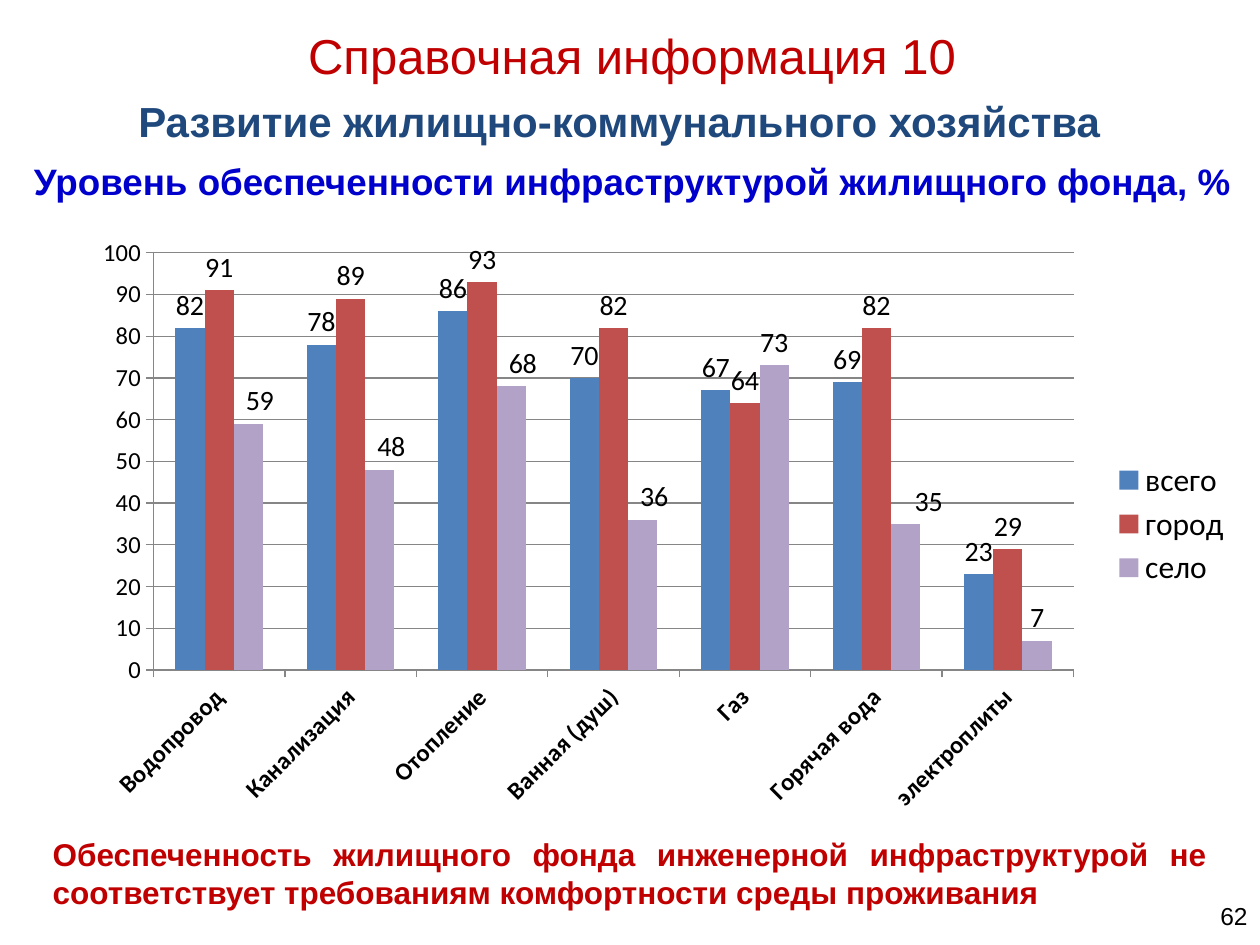
from dataclasses import dataclass

from pptx import Presentation
from pptx.chart.data import CategoryChartData
from pptx.dml.color import RGBColor
from pptx.enum.chart import XL_CHART_TYPE, XL_LABEL_POSITION, XL_LEGEND_POSITION, XL_TICK_MARK
from pptx.enum.text import MSO_ANCHOR, PP_ALIGN
from pptx.oxml import parse_xml
from pptx.oxml.ns import nsdecls
from pptx.util import Inches, Pt


@dataclass(frozen=True)
class Theme:
    """Colours, fonts and type sizes of the slide."""
    text_font: str = "Arial"
    chart_font: str = "Calibri"
    black: str = "000000"
    red: str = "C00000"
    navy: str = "1F497D"
    blue: str = "0000CC"
    grid: str = "868686"
    title: int = 28
    heading: int = 24
    subheading: int = 21
    body: int = 18
    label: int = 16
    small: int = 14


THEME = Theme()
CATEGORIES = ["Водопровод", "Канализация", "Отопление", "Ванная (душ)", "Газ",
              "Горячая вода", "электроплиты"]
SERIES = [
    ("всего", "4F81BD", [82, 78, 86, 70, 67, 69, 23]),
    ("город", "C0504D", [91, 89, 93, 82, 64, 82, 29]),
    ("село", "B3A2C7", [59, 48, 68, 36, 73, 35, 7]),
]
VILLAGE_LABEL_SHIFTS = {0: 0.01, 1: 0.01, 2: 0.01, 3: 0.01, 5: 0.02}


def place(shape, left, top, width, height):
    """Set the position and size of a shape in inches."""
    shape.left, shape.top = Inches(left), Inches(top)
    shape.width, shape.height = Inches(width), Inches(height)


def write_text(box, text, *, size, color, bold=False, align=PP_ALIGN.CENTER,
               anchor=MSO_ANCHOR.TOP, line_spacing=None):
    """Fill a box with one formatted paragraph."""
    frame = box.text_frame
    frame.word_wrap = True
    frame.vertical_anchor = anchor
    para = frame.paragraphs[0]
    para.alignment = align
    para.line_spacing = line_spacing
    span = para.add_run()
    span.text = text
    span.font.name = THEME.text_font
    span.font.size = Pt(size)
    span.font.bold = bold
    span.font.color.rgb = RGBColor.from_string(color)


def add_text(page, bounds, text, **style):
    """Add a text box with one formatted paragraph."""
    box = page.shapes.add_textbox(*map(Inches, bounds))
    write_text(box, text, **style)


def manual_layout(inner=False, edge=True, **values):
    """Return a chart layout element with the given fractions."""
    target = '<c:layoutTarget val="inner"/>' if inner else ""
    modes = '<c:xMode val="edge"/><c:yMode val="edge"/>' if edge else ""
    sizes = "".join(f'<c:{key} val="{value}"/>' for key, value in values.items())
    return parse_xml(f'<c:layout {nsdecls("c")}><c:manualLayout>{target}{modes}{sizes}'
                     '</c:manualLayout></c:layout>')


def set_layout(element, layout, index):
    """Put a layout into a chart element in place of any present one."""
    for old in element.xpath("./c:layout"):
        element.remove(old)
    element.insert(index, layout)


def style_axis(axis, bold=False):
    """Format the line, ticks and labels of an axis."""
    axis.major_tick_mark = XL_TICK_MARK.OUTSIDE
    axis.minor_tick_mark = XL_TICK_MARK.NONE
    axis.format.line.color.rgb = RGBColor.from_string(THEME.grid)
    axis.tick_labels.font.size = Pt(THEME.small)
    axis.tick_labels.font.bold = bold


def style_series(series, color):
    """Colour a series and show its values above the columns."""
    series.format.fill.solid()
    series.format.fill.fore_color.rgb = RGBColor.from_string(color)
    series.invert_if_negative = False
    labels = series.data_labels
    labels.show_value = True
    labels.position = XL_LABEL_POSITION.OUTSIDE_END
    labels.font.size = Pt(THEME.label)


def shift_labels(series, shifts):
    """Move single value labels sideways by fractions of the chart width."""
    for index, shift in shifts.items():
        label = series.points[index].data_label
        label.position = XL_LABEL_POSITION.OUTSIDE_END
        label.font.size = Pt(THEME.label)
        element = series._element.xpath(f'.//c:dLbl[c:idx/@val="{index}"]')[0]
        set_layout(element, manual_layout(edge=False, x=shift, y=0), 1)


def add_supply_chart(page):
    """Add the clustered columns of housing infrastructure."""
    data = CategoryChartData()
    data.categories = CATEGORIES
    for name, _, values in SERIES:
        data.add_series(name, values)
    bounds = map(Inches, (0.67, 1.77, 9.13, 4.73))
    chart = page.shapes.add_chart(XL_CHART_TYPE.COLUMN_CLUSTERED, *bounds, data).chart
    chart.has_title = False
    chart.font.name = THEME.chart_font
    chart.font.size = Pt(THEME.body)
    chart.font.color.rgb = RGBColor.from_string(THEME.black)

    plot = chart.plots[0]
    plot.gap_width = 150
    plot.overlap = 0
    plot.vary_by_categories = False
    for series, (_, color, _) in zip(plot.series, SERIES):
        style_series(series, color)
    shift_labels(plot.series[2], VILLAGE_LABEL_SHIFTS)

    style_axis(chart.category_axis, bold=True)
    chart.category_axis._element.txPr.bodyPr.set("rot", "-2700000")
    values = chart.value_axis
    style_axis(values)
    values.minimum_scale, values.maximum_scale, values.major_unit = 0, 100, 10
    values.has_major_gridlines = True
    values.major_gridlines.format.line.color.rgb = RGBColor.from_string(THEME.grid)

    chart.has_legend = True
    chart.legend.position = XL_LEGEND_POSITION.RIGHT
    chart.legend.include_in_layout = False
    set_layout(chart.legend._element, manual_layout(x=0.89, y=0.39, w=0.11, h=0.23), 1)
    plot_area = chart._chartSpace.xpath("./c:chart/c:plotArea")[0]
    set_layout(plot_area, manual_layout(True, x=0.06, y=0.05, w=0.8, h=0.7), 0)


def main():
    """Build the slide and save it."""
    deck = Presentation()
    deck.slide_width, deck.slide_height = Inches(10), Inches(7.5)
    page = deck.slides.add_slide(deck.slide_layouts[5])
    title = page.shapes.title
    place(title, 0.2, 0.07, 9.63, 0.73)
    write_text(title, "Справочная информация 10", size=THEME.title, color=THEME.red,
               anchor=MSO_ANCHOR.MIDDLE)
    add_text(page, (0.35, 0.71, 9.13, 0.5), "Развитие жилищно-коммунального хозяйства",
             size=THEME.heading, color=THEME.navy, bold=True)
    add_text(page, (0.04, 1.25, 9.96, 0.47),
             "Уровень обеспеченности инфраструктурой жилищного фонда, %",
             size=THEME.subheading, color=THEME.blue, bold=True, line_spacing=0.9)
    add_supply_chart(page)
    add_text(page, (0.32, 6.58, 9.36, 0.71),
             "Обеспеченность жилищного фонда инженерной инфраструктурой не соответствует "
             "требованиям комфортности среды проживания",
             size=THEME.body, color=THEME.red, bold=True, align=PP_ALIGN.JUSTIFY)
    add_text(page, (9.49, 7.07, 0.51, 0.4), "62", size=THEME.small, color=THEME.black,
             align=PP_ALIGN.RIGHT, anchor=MSO_ANCHOR.MIDDLE)
    deck.save("out.pptx")


if __name__ == "__main__":
    main()
